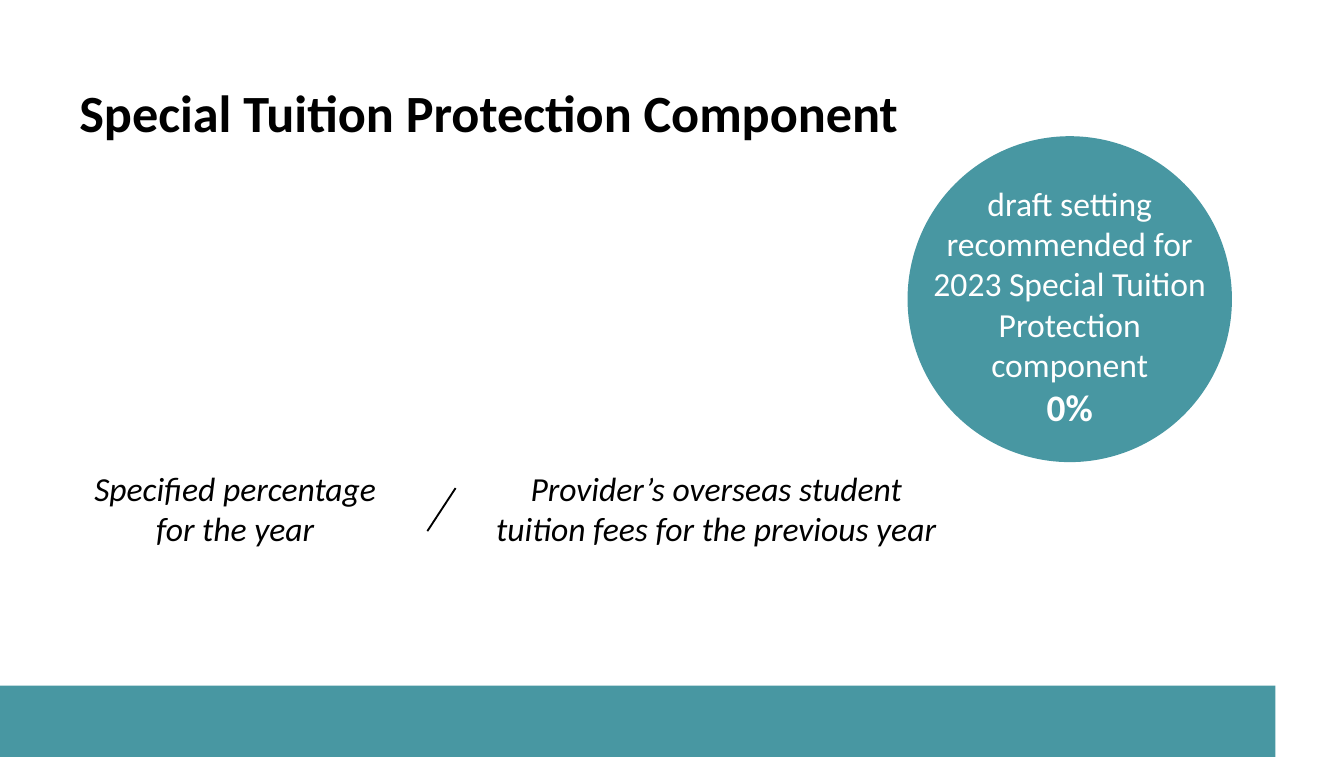
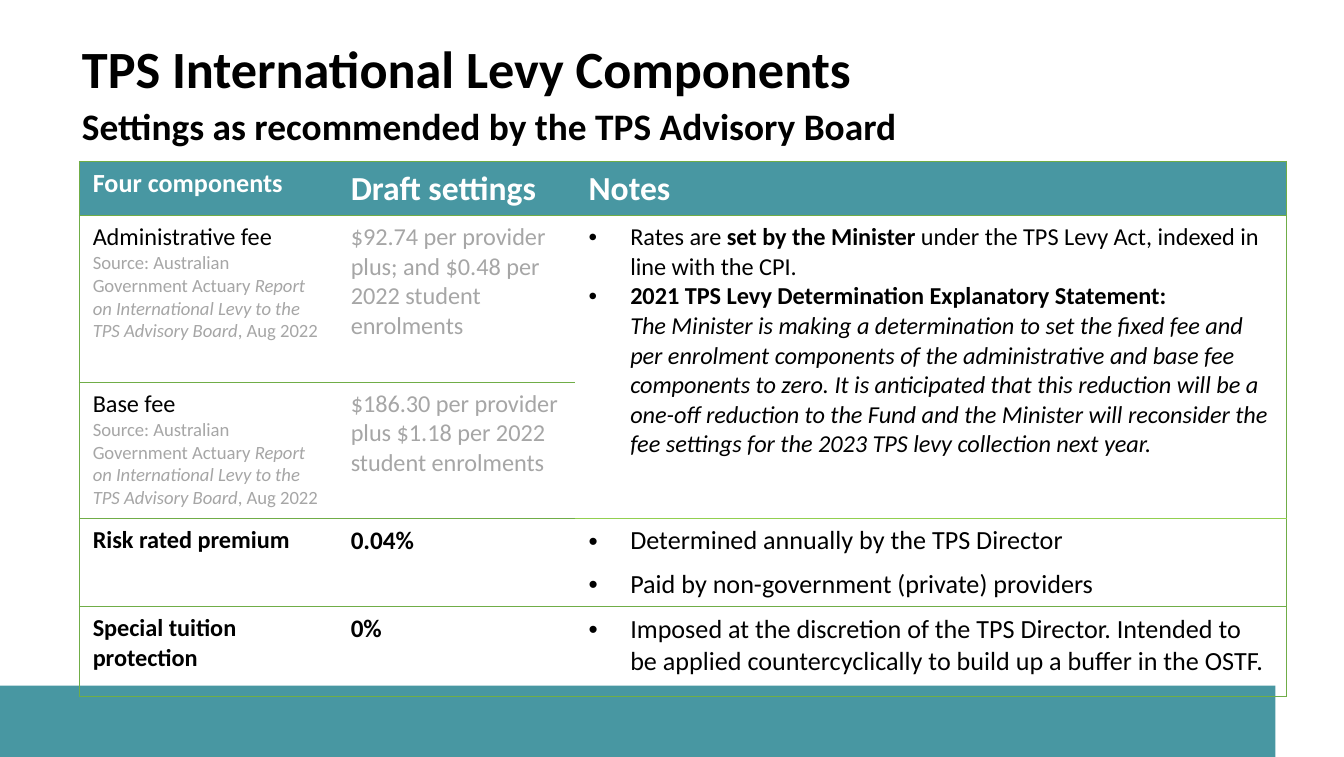
"""Build two slides on the components of the TPS International Levy."""
from lxml import etree
from pptx import Presentation
from pptx.dml.color import RGBColor
from pptx.enum.shapes import MSO_CONNECTOR, MSO_SHAPE
from pptx.enum.text import MSO_ANCHOR, MSO_AUTO_SIZE, PP_ALIGN
from pptx.oxml.ns import qn
from pptx.util import Inches, Pt

LEFT, CENTER = PP_ALIGN.LEFT, PP_ALIGN.CENTER
TOP = MSO_ANCHOR.TOP
NO_FIT = MSO_AUTO_SIZE.NONE
STRAIGHT = MSO_CONNECTOR.STRAIGHT
RECTANGLE, OVAL = MSO_SHAPE.RECTANGLE, MSO_SHAPE.OVAL
PLAIN_TABLE = "{2D5ABB26-0587-4C30-8999-92F81FD0307C}"

COLORS = {"teal": "4897A2", "black": "000000", "white": "FFFFFF",
          "grey": "A6A6A6", "green": "70AD47", "lime": "92D050"}
FONT = "Calibri"
WIDTH, HEIGHT = 10, 5.63
BAND_WIDTH, BAND_HEIGHT = 9.49, 0.53
HANG = 0.31


def line(*spans, size=13, color="black", after=0, bullet=False):
    """Describe a paragraph; each span is (text, style letters)."""
    return {"spans": spans, "size": size, "color": color,
            "after": after, "bullet": bullet}


SOURCE = line(("Source: Australian Government Actuary ", ""),
              ("Report on International Levy to the TPS Advisory Board", "i"),
              (", Aug 2022", ""), size=10, color="grey")

PROTECTION_TITLE = [line(("Special Tuition Protection Component", "b"), size=28, after=2)]
LEVY_TITLE = [line(("TPS International Levy Components", "b"), size=28, after=2),
              line(("Settings as recommended by the TPS Advisory Board", "b"),
                   size=20, after=2)]

FORMULA_TOP, FORMULA_HEIGHT = 3.43, 0.71
FORMULA = [(0.59, 2.32, "Specified percentage for the year"),
           (3.57, 3.52, "Provider’s overseas student tuition fees for the previous year")]
DIVISION = (3.39, 3.63, 3.18, 3.95)
CIRCLE = (6.76, 1.02, 2.4, 2.41)
CIRCLE_TEXT = (6.81, 1.31, 2.3, 1.96)
DRAFT_SETTING = [
    line(("draft setting recommended for 2023 Special Tuition Protection component", ""),
         size=18, color="white"),
    line(("0%", "b"), size=20, color="white")]

TABLE_LEFT, TABLE_TOP = 0.59, 1.2
COLUMNS = [1.92, 1.77, 5.29]
ROWS = [0.33, 1.24, 1.01, 0.49, 0.67]
ADMIN_ROW, BASE_ROW, NOTES = 1, 2, 2
LEVY_CELLS = [
    [[line(("Four components", "b"), size=14, color="white")],
     [line(("Draft settings", "b"), size=18, color="white")],
     [line(("Notes", "b"), size=18, color="white")]],
    [[line(("Administrative fee", "")), SOURCE],
     [line(("$92.74 per provider plus; and $0.48 per 2022 student enrolments", ""),
           color="grey")],
     [line(("Rates are ", ""), ("set by the Minister ", "b"),
           ("under the TPS Levy Act, indexed in line with the CPI.", ""), bullet=True),
      line(("2021 TPS Levy Determination Explanatory Statement: ", "b"), ("\n", ""),
           ("The Minister is making a determination to set the fixed fee and per "
            "enrolment components of the administrative and base fee components to "
            "zero. It is anticipated that this reduction will be a one-off reduction "
            "to the Fund and the Minister will reconsider the fee settings for the "
            "2023 TPS levy collection next year.", "i"), bullet=True)]],
    [[line(("Base fee", "")), SOURCE],
     [line(("$186.30 per provider plus $1.18 per 2022 student enrolments", ""),
           color="grey")],
     None],
    [[line(("Risk rated premium", "b"))],
     [line(("0.04%", "b"), size=13.5)],
     [line(("Determined annually by the TPS Director", ""), size=14, after=6, bullet=True),
      line(("Paid by non-government (private) providers", ""),
           size=14, after=6, bullet=True)]],
    [[line(("Special tuition protection", "b"))],
     [line(("0%", "b"), size=13.5)],
     [line(("Imposed at the discretion of the TPS Director. Intended to be applied "
            "countercyclically to build up a buffer in the OSTF.", ""),
           size=14, bullet=True)]],
]


def rgb(name):
    """Look up a colour by name."""
    return RGBColor.from_string(COLORS[name])


def inches(*lengths):
    """Convert several lengths to slide units."""
    return [Inches(length) for length in lengths]


def style_font(font, style):
    """Set bold and italic from style letters."""
    font.bold, font.italic = "b" in style, "i" in style


def add_bullet(para):
    """Give a paragraph a hanging bullet."""
    properties = para._p.get_or_add_pPr()
    properties.set("marL", str(Inches(HANG)))
    properties.set("indent", str(-Inches(HANG)))
    etree.SubElement(properties, qn("a:buFont")).set("typeface", "Arial")
    etree.SubElement(properties, qn("a:buChar")).set("char", "•")


def write(frame, lines, align=LEFT):
    """Fill a text frame with described paragraphs."""
    frame.word_wrap = True
    for index, item in enumerate(lines):
        para = frame.add_paragraph() if index else frame.paragraphs[0]
        para.alignment = align
        para.space_after = Pt(item["after"])
        if item["bullet"]:
            add_bullet(para)
        para.font.name, para.font.size = FONT, Pt(item["size"])
        para.font.color.rgb = rgb(item["color"])
        styles = {style for _, style in item["spans"]}
        if len(styles) == 1:
            style_font(para.font, *styles)
        for text, style in item["spans"]:
            if text == "\n":
                para.add_line_break()
                continue
            span = para.add_run()
            span.text = text
            if len(styles) > 1:
                style_font(span.font, style)


def add_solid(page, kind, box):
    """Draw a teal shape."""
    shape = page.shapes.add_shape(kind, *inches(*box))
    shape.shadow.inherit = False
    shape.fill.solid()
    shape.fill.fore_color.rgb = rgb("teal")
    shape.line.fill.background()
    return shape


def add_text(page, box, lines):
    """Add a centred text box."""
    write(page.shapes.add_textbox(*inches(*box)).text_frame, lines, CENTER)


def add_page(deck, title, box):
    """Add a page with its title and the teal band."""
    page = deck.slides.add_slide(deck.slide_layouts[5])
    heading = page.shapes.title
    heading.left, heading.top, heading.width, heading.height = inches(*box)
    frame = heading.text_frame
    frame.margin_left = frame.margin_right = frame.margin_top = frame.margin_bottom = 0
    frame.vertical_anchor, frame.auto_size = TOP, NO_FIT
    write(frame, title)
    add_solid(page, RECTANGLE, (0, HEIGHT - BAND_HEIGHT, BAND_WIDTH, BAND_HEIGHT))
    return page


def add_border(cell, side, color="green", points=0.5):
    """Draw one side of a cell."""
    border = etree.SubElement(cell._tc.get_or_add_tcPr(), qn(f"a:ln{side}"),
                              w=str(Pt(points)))
    fill = etree.SubElement(border, qn("a:solidFill"))
    etree.SubElement(fill, qn("a:srgbClr"), val=COLORS[color])


def add_borders(cell, row, column):
    """Frame the table and rule off its rows."""
    if column == 0:
        add_border(cell, "L")
    if column == len(COLUMNS) - 1:
        add_border(cell, "R")
    if column == NOTES and row == BASE_ROW + 1:
        add_border(cell, "T", "lime", 1)
    elif (row, column) != (BASE_ROW, NOTES):
        add_border(cell, "T")
    if column == NOTES and row in (ADMIN_ROW, BASE_ROW):
        add_border(cell, "B", "lime", 1)
    else:
        add_border(cell, "B")


def add_levy_table(page):
    """Add the table of levy components."""
    frame = page.shapes.add_table(len(ROWS), len(COLUMNS), *inches(
        TABLE_LEFT, TABLE_TOP, sum(COLUMNS), sum(ROWS)))
    table = frame.table
    table.first_row = table.horz_banding = False
    next(frame.element.iter(qn("a:tableStyleId"))).text = PLAIN_TABLE
    for column, width in zip(table.columns, COLUMNS):
        column.width = Inches(width)
    for row, height in zip(table.rows, ROWS):
        row.height = Inches(height)
    table.cell(ADMIN_ROW, NOTES).merge(table.cell(BASE_ROW, NOTES))
    for row, contents in enumerate(LEVY_CELLS):
        for column, lines in enumerate(contents):
            cell = table.cell(row, column)
            add_borders(cell, row, column)
            if row == 0:
                cell.fill.solid()
                cell.fill.fore_color.rgb = rgb("teal")
            else:
                cell.fill.background()
            if lines:
                write(cell.text_frame, lines)


def build_protection(deck):
    """Build the page on the special tuition protection component."""
    page = add_page(deck, PROTECTION_TITLE, (0.59, 0.6, 8.9, 0.47))
    for left, width, text in FORMULA:
        add_text(page, (left, FORMULA_TOP, width, FORMULA_HEIGHT),
                 [line((text, "i"), size=18)])
    circle = add_solid(page, OVAL, CIRCLE)
    circle.line.color.rgb = rgb("teal")
    circle.line.width = Pt(1)
    add_text(page, CIRCLE_TEXT, DRAFT_SETTING)
    slash = page.shapes.add_connector(STRAIGHT, *inches(*DIVISION))
    slash.line.color.rgb = rgb("black")
    slash.line.width = Pt(1)
    etree.SubElement(slash.element.spPr, qn("a:effectLst"))


def build_levy(deck):
    """Build the page with all levy components."""
    page = add_page(deck, LEVY_TITLE, (0.61, 0.27, 8.9, 0.84))
    add_levy_table(page)


def main():
    """Build and save the deck."""
    deck = Presentation()
    deck.slide_width, deck.slide_height = inches(WIDTH, HEIGHT)
    build_protection(deck)
    build_levy(deck)
    deck.save("out.pptx")


if __name__ == "__main__":
    main()
